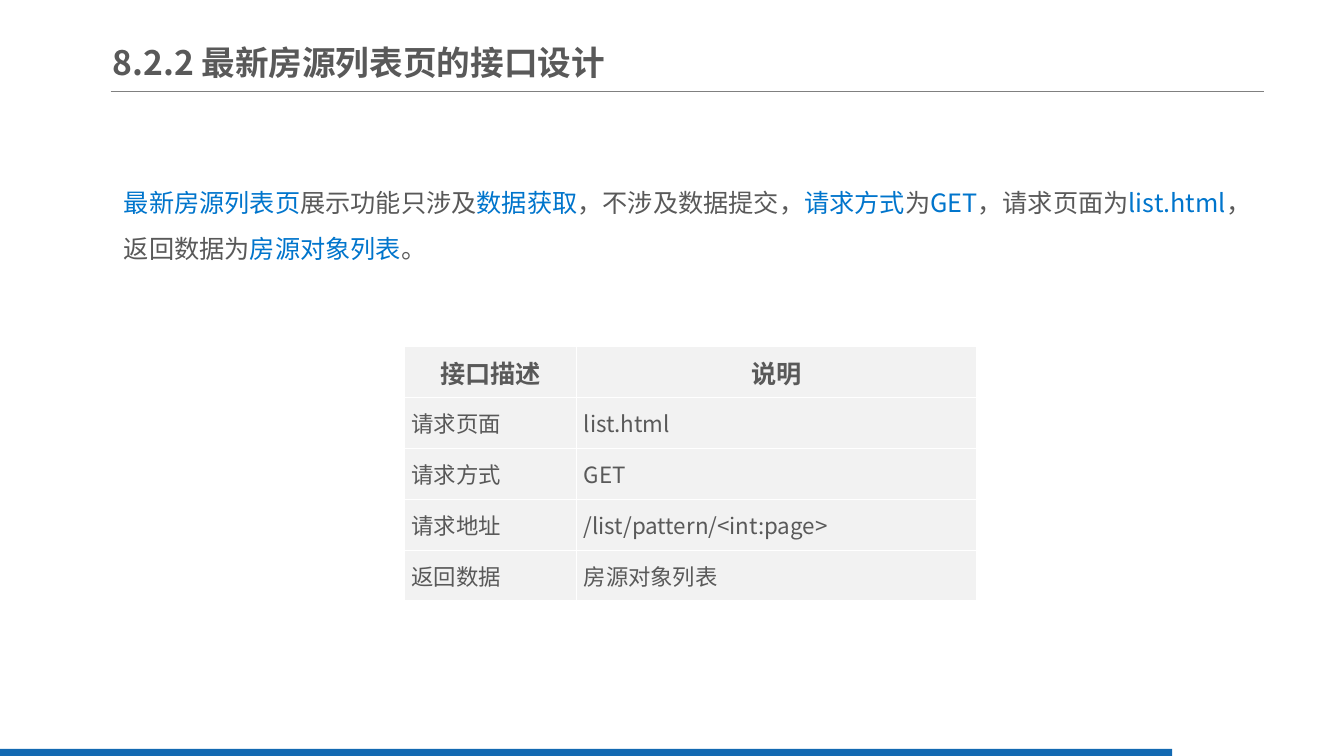
"""Build the slide on the interface design of the newest-listings page."""
from dataclasses import dataclass

from lxml.etree import SubElement
from pptx import Presentation
from pptx.dml.color import RGBColor
from pptx.enum.shapes import MSO_CONNECTOR as Connector, MSO_SHAPE as Shape
from pptx.enum.text import MSO_ANCHOR as Anchor, MSO_AUTO_SIZE as AutoSize, PP_ALIGN as Align
from pptx.oxml import parse_xml
from pptx.oxml.ns import nsdecls, qn
from pptx.util import Cm, Pt


@dataclass(frozen=True)
class Theme:
    font: str = "Noto Sans CJK SC"
    text: str = "595959"
    accent: str = "0075CC"
    bar: str = "1369B2"
    rule: str = "808080"
    cell: str = "F2F2F2"
    border: str = "FFFFFF"
    title_size: int = 24
    body_size: int = 18
    cell_size: int = 16
    hairline: float = 0.75


theme = Theme()


def add_span(para, text, size, color=theme.text, bold=False):
    span = para.add_run()
    span.text = text
    span.font.size = Pt(size)
    span.font.bold = bold
    span.font.color.rgb = RGBColor.from_string(color)
    span.font.name = theme.font
    SubElement(span.font._element, qn("a:ea"), typeface=theme.font)


def place(box, left, top, width, height):
    box.left, box.top, box.width, box.height = Cm(left), Cm(top), Cm(width), Cm(height)


deck = Presentation()
deck.slide_width, deck.slide_height = Cm(33.87), Cm(19.05)
page = deck.slides.add_slide(deck.slide_layouts[1])

rule = page.shapes.add_connector(Connector.STRAIGHT, Cm(2.79), Cm(2.31), Cm(31.85), Cm(2.31))
rule.line.color.rgb = RGBColor.from_string(theme.rule)
rule.line.width = Pt(theme.hairline)
SubElement(rule._element.spPr, qn("a:effectLst"))

bar = page.shapes.add_shape(Shape.RECTANGLE, 0, Cm(18.87), Cm(29.54), Cm(0.18))
bar.shadow.inherit = False
bar.fill.solid()
bar.fill.fore_color.rgb = RGBColor.from_string(theme.bar)
bar.line.fill.background()

title = page.shapes.title
place(title, 2.84, 0.86, 13.61, 1.4)
frame = title.text_frame
frame.auto_size = AutoSize.NONE
frame.word_wrap = True
frame.vertical_anchor = Anchor.MIDDLE
frame.margin_left = frame.margin_right = 0
frame.margin_top = frame.margin_bottom = Cm(0.18)
para = frame.paragraphs[0]
para.alignment = Align.LEFT
add_span(para, "8.2.2 最新房源列表页的接口设计", theme.title_size, bold=True)

summary = [
    ("最新房源列表页", "展示功能只涉及"),
    ("数据获取", "，不涉及数据提交，"),
    ("请求方式", "为"),
    ("GET", "，请求页面为"),
    ("list.html", "，返回数据为"),
    ("房源对象列表", "。"),
]
body = page.placeholders[1]
place(body, 2.87, 4.22, 29.08, 2.57)
frame = body.text_frame
frame.auto_size = AutoSize.SHAPE_TO_FIT_TEXT
frame.word_wrap = True
frame.vertical_anchor = Anchor.TOP
para = frame.paragraphs[0]
para.line_spacing = 1.5
para.space_before = Pt(0)
properties = para._p.get_or_add_pPr()
properties.set("marL", "0")
properties.set("indent", "0")
SubElement(properties, qn("a:buNone"))
for keyword, remark in summary:
    add_span(para, keyword, theme.body_size, theme.accent)
    add_span(para, remark, theme.body_size)

rows = [
    ("接口描述", "说明"),
    ("请求页面", "list.html"),
    ("请求方式", "GET"),
    ("请求地址", "/list/pattern/<int:page>"),
    ("返回数据", "房源对象列表"),
]
widths = (4.34, 10.08)
row_height = 1.28
table = page.shapes.add_table(
    len(rows), len(widths), Cm(10.19), Cm(8.74), Cm(sum(widths)), Cm(row_height * len(rows))
).table
table.horz_banding = False
for column, width in zip(table.columns, widths):
    column.width = Cm(width)
for row_index, row in enumerate(rows):
    table.rows[row_index].height = Cm(row_height)
    header = row_index == 0
    for column_index, text in enumerate(row):
        cell = table.cell(row_index, column_index)
        cell.vertical_anchor = Anchor.MIDDLE
        cell.margin_left = cell.margin_right = Cm(0.18)
        cell.margin_top = cell.margin_bottom = 0
        for side in ("lnL", "lnR", "lnT", "lnB"):
            cell._tc.get_or_add_tcPr().append(parse_xml(
                f'<a:{side} {nsdecls("a")} w="{Pt(theme.hairline)}"><a:solidFill>'
                f'<a:srgbClr val="{theme.border}"/></a:solidFill></a:{side}>'
            ))
        cell.fill.solid()
        cell.fill.fore_color.rgb = RGBColor.from_string(theme.cell)
        para = cell.text_frame.paragraphs[0]
        para.alignment = Align.CENTER if header else Align.LEFT
        add_span(para, text, theme.body_size if header else theme.cell_size, bold=header)

deck.save("out.pptx")
